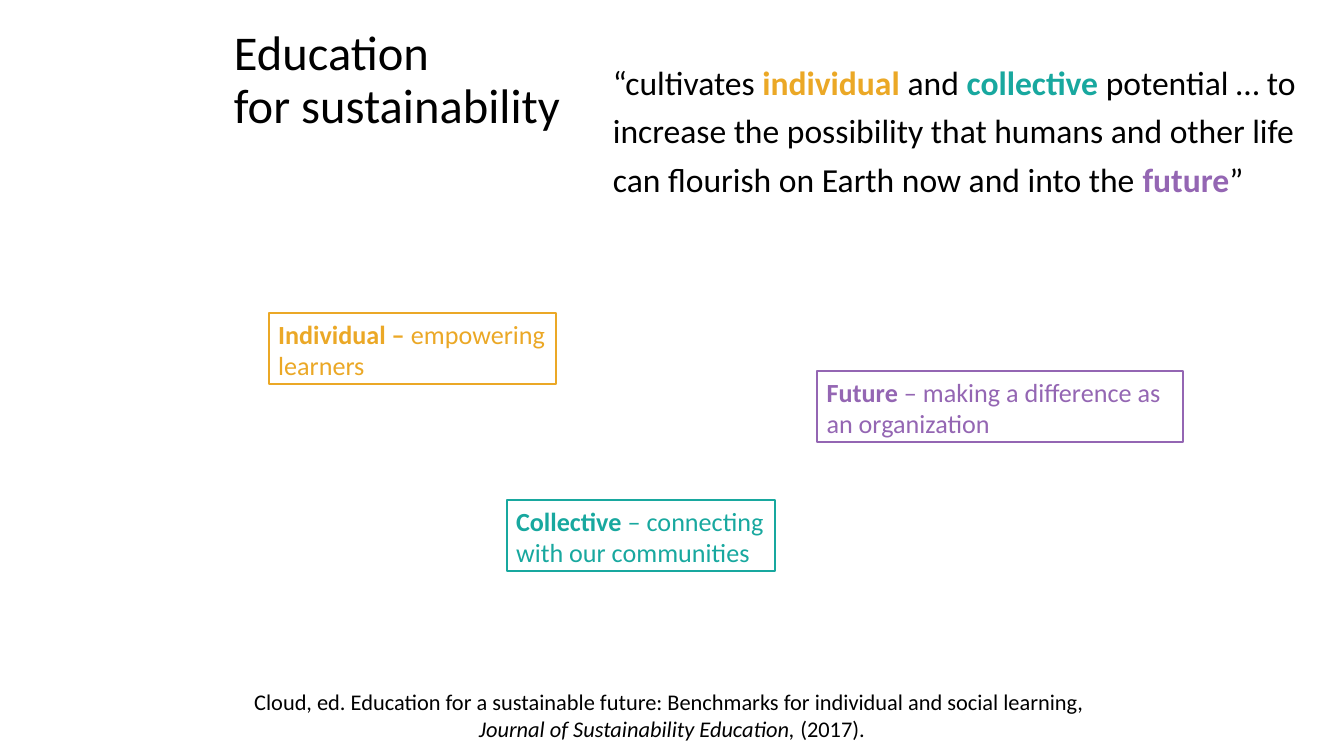
from dataclasses import dataclass

from pptx import Presentation
from pptx.dml.color import RGBColor
from pptx.enum.shapes import MSO_SHAPE as Shape
from pptx.enum.text import MSO_ANCHOR as Anchor, PP_ALIGN as Align
from pptx.util import Inches, Pt


@dataclass(frozen=True)
class Theme:
    font: str = "Calibri"
    black: str = "000000"
    white: str = "FFFFFF"
    individual: str = "EBA826"
    collective: str = "18A89F"
    future: str = "9466B3"
    title_size: int = 26
    quote_size: int = 18
    label_size: int = 14
    citation_size: int = 12


THEME = Theme()


def rgb(color):
    return RGBColor.from_string(color)


def set_frame(frame, horizontal=0.07, vertical=0.04, anchor=Anchor.TOP):
    frame.word_wrap = True
    frame.vertical_anchor = anchor
    frame.margin_left = frame.margin_right = Inches(horizontal)
    frame.margin_top = frame.margin_bottom = Inches(vertical)


def add_text_frame(slide, box, **layout):
    frame = slide.shapes.add_textbox(*map(Inches, box)).text_frame
    set_frame(frame, **layout)
    return frame


def style(paragraph, size, color=THEME.black, align=Align.LEFT, spacing=1.0):
    paragraph.alignment = align
    paragraph.line_spacing = spacing
    paragraph.font.name = THEME.font
    paragraph.font.size = Pt(size)
    paragraph.font.color.rgb = rgb(color)


def add_run(paragraph, text, color=None, bold=None, italic=None):
    run = paragraph.add_run()
    run.text = text
    run.font.bold = bold
    run.font.italic = italic
    if color:
        run.font.color.rgb = rgb(color)


def add_title(slide, box):
    paragraph = add_text_frame(slide, box, anchor=Anchor.MIDDLE).paragraphs[0]
    style(paragraph, THEME.title_size, spacing=0.9)
    add_run(paragraph, "Education ")
    paragraph.add_line_break()
    add_run(paragraph, "for sustainability")


def add_quote(slide, box):
    paragraph = add_text_frame(slide, box).paragraphs[0]
    style(paragraph, THEME.quote_size, spacing=1.2)
    for text, color in (
        ("“cultivates ", None),
        ("individual", THEME.individual),
        (" and ", None),
        ("collective", THEME.collective),
        (" potential … to increase the possibility that humans and other life "
         "can flourish on Earth now and into the ", None),
        ("future", THEME.future),
        ("”", None),
    ):
        add_run(paragraph, text, color, bold=bool(color))


def add_label(slide, box, color, term, meaning):
    shape = slide.shapes.add_shape(Shape.RECTANGLE, *map(Inches, box))
    shape.shadow.inherit = False
    shape.fill.solid()
    shape.fill.fore_color.rgb = rgb(THEME.white)
    shape.line.color.rgb = rgb(color)
    shape.line.width = Pt(1)
    set_frame(shape.text_frame)
    paragraph = shape.text_frame.paragraphs[0]
    style(paragraph, THEME.label_size, color)
    add_run(paragraph, term, bold=True)
    add_run(paragraph, meaning)


def add_citation(slide, box):
    frame = add_text_frame(slide, box, horizontal=0.03, vertical=0.03)
    work, journal = frame.paragraphs[0], frame.add_paragraph()
    for paragraph in (work, journal):
        style(paragraph, THEME.citation_size, align=Align.CENTER)
    add_run(work, "Cloud, ed. Education for a sustainable future: "
                  "Benchmarks for individual and social learning, ")
    add_run(journal, "Journal of Sustainability Education, ", italic=True)
    add_run(journal, "(2017).")


def main():
    # Widescreen page, 16 to 9
    presentation = Presentation()
    presentation.slide_width = Inches(10)
    presentation.slide_height = Inches(10 * 9 / 16)
    slide = presentation.slides.add_slide(presentation.slide_layouts[6])

    # Heading, quotation and its source
    add_title(slide, (1.67, 0.37, 2.62, 0.47))
    add_quote(slide, (4.49, 0.36, 5.36, 1.49))
    add_citation(slide, (0, 5.09, 10, 0.53))

    # One label for each highlighted word of the quotation
    label_height = 0.53
    for left, top, width, color, term, meaning in (
        (2, 2.33, 2.14, THEME.individual, "Individual – ", "empowering learners"),
        (3.77, 3.72, 2, THEME.collective, "Collective ",
         "– connecting with our communities"),
        (6.08, 2.76, 2.72, THEME.future, "Future",
         " – making a difference as an organization"),
    ):
        add_label(slide, (left, top, width, label_height), color, term, meaning)

    presentation.save("out.pptx")


if __name__ == "__main__":
    main()
